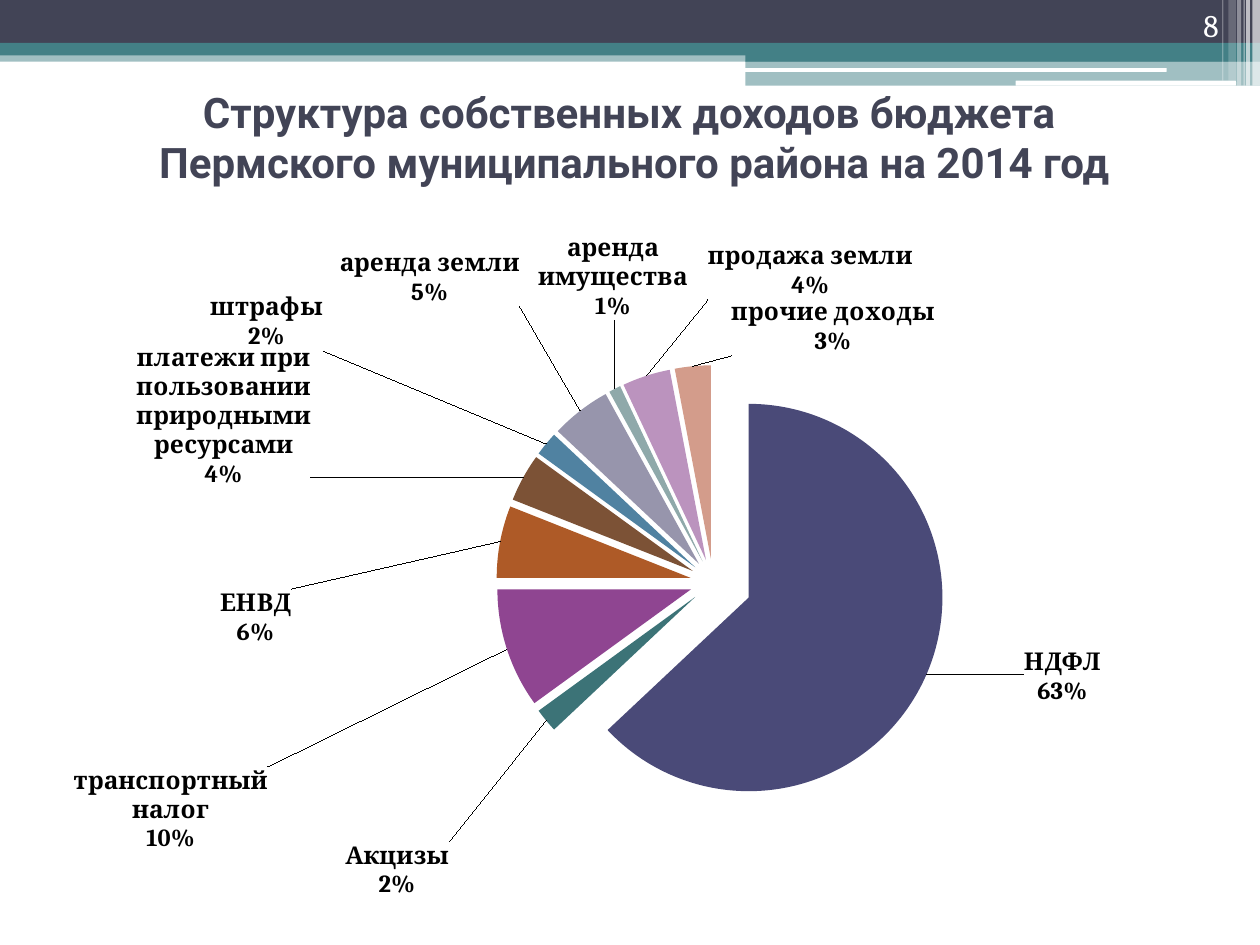
"""Build the slide on the structure of the district's own budget revenue in 2014."""
import copy
import math

from lxml import etree
from pptx import Presentation
from pptx import util as u
from pptx.chart import data as chart_data
from pptx.dml import color
from pptx.enum import chart as chart_enum, shapes, text
from pptx.oxml import ns

COLOURS = {
    "white": "FFFFFF", "ink": "000000", "navy": "424456", "teal": "438086",
    "indigo": "4A4A78", "pine": "3C7377", "purple": "8F4591", "rust": "AE5A27",
    "brown": "7C5236", "blue": "5082A1", "grey": "9795AC", "sage": "8FA9AA",
    "lilac": "BB93BE", "salmon": "D39C8B",
}

BARS = [
    (0, 28.8, 720, 6.5, "teal", 50),
    (0, 0, 720, 24.5, "navy", 100),
    (0, 24.5, 720, 7.2, "teal", 100),
    (426, 28.1, 294, 7.2, "teal", 100),
    (426, 34.6, 294, 14.4, "teal", 50),
]
PILLS = [(425.5, 38.9, 241.2, 2.2), (580.3, 46.1, 126, 2.9)]
STRIPES = [
    (715.7, 4.3, 49, 65), (712.1, 2.2, 49, 65), (710.6, 0.7, 49, 60),
    (707, 2.2, 49, 40), (702, 4.3, 46.1, 20), (698.4, 0.7, 46.1, 30),
]

REVENUES = [
    ("НДФЛ", 63, "indigo", (585.1, 370.3)),
    ("Акцизы", 2, "pine", (256.6, 481.1)),
    ("транспортный налог", 10, "purple", (153.1, 438.3)),
    ("ЕНВД", 6, "rust", (166.3, 369.7)),
    ("платежи при пользовании природными ресурсами", 4, "brown", (177.7, 279.4)),
    ("штрафы", 2, "blue", (184.6, 200.6)),
    ("аренда земли", 5, "grey", (297.1, 175.4)),
    ("аренда имущества", 1, "sage", (393.1, 183.4)),
    ("продажа земли", 4, "lilac", (521.7, 171.4)),
    ("прочие доходы", 3, "salmon", (534.3, 203.4)),
]
CHART_BOX = (20.9, 127.4, 666.7, 387.4)
PLOT = {"x": 0.25, "y": 0.21, "w": 0.66, "h": 0.64}
EXPLOSION, FIRST_EXPLOSION = 12, 20
LABEL_GAP = 4.25


def element(tag, value=None):
    made = etree.Element(ns.qn(tag))
    if value is not None:
        made.set("val", str(value))
    return made


def layout(places, inner=False):
    outer = element("c:layout")
    manual = etree.SubElement(outer, ns.qn("c:manualLayout"))
    if inner:
        manual.append(element("c:layoutTarget", "inner"))
        manual.extend([element("c:xMode", "edge"), element("c:yMode", "edge")])
    manual.extend([element(f"c:{key}", value) for key, value in places.items()])
    return outer


class Deck:
    """Holds the style and the current slide."""

    def __init__(self, prs):
        self.slide = prs.slides.add_slide(prs.slide_layouts[5])

    def rgb(self, name):
        return color.RGBColor.from_string(COLOURS[name])

    def style(self, font, name, size, colour, bold=False):
        formats = {"name": name, "size": u.Pt(size), "bold": bold}
        for key, value in formats.items():
            setattr(font, key, value)
        font.color.rgb = self.rgb(colour)

    def bar(self, left, top, width, height, colour, opacity=100, rounded=False):
        kind = shapes.MSO_SHAPE.ROUNDED_RECTANGLE if rounded else shapes.MSO_SHAPE.RECTANGLE
        bar = self.slide.shapes.add_shape(kind, *map(u.Pt, (left, top, width, height)))
        bar.shadow.inherit = False
        bar.line.fill.background()
        bar.fill.solid()
        bar.fill.fore_color.rgb = self.rgb(colour)
        if opacity < 100:
            tint = bar._element.spPr.find(".//" + ns.qn("a:srgbClr"))
            etree.SubElement(tint, ns.qn("a:alpha")).set("val", str(opacity * 1000))

    def put_text(self, holder, words, anchor, align, **font):
        frame = holder.text_frame
        formats = {"word_wrap": True, "auto_size": text.MSO_AUTO_SIZE.NONE,
                   "vertical_anchor": anchor, "text": words}
        for key, value in formats.items():
            setattr(frame, key, value)
        paragraph = frame.paragraphs[0]
        paragraph.alignment = align
        for run in paragraph.runs:
            self.style(run.font, **font)

    def title(self, box, words):
        heading = self.slide.shapes.title
        for key, value in zip(("left", "top", "width", "height"), box):
            setattr(heading, key, u.Pt(value))
        self.put_text(heading, words, text.MSO_ANCHOR.MIDDLE, text.PP_ALIGN.CENTER,
                      name="Roboto", size=24, colour="navy", bold=True)

    def page_number(self, box, words):
        number = self.slide.shapes.add_textbox(*map(u.Pt, box))
        self.put_text(number, words, text.MSO_ANCHOR.BOTTOM, text.PP_ALIGN.RIGHT,
                      name="Cambria", size=18, colour="white")

    def pie(self, box, revenues):
        shares = chart_data.CategoryChartData()
        shares.categories = [row[0] for row in revenues]
        shares.add_series("Series 1", [row[1] for row in revenues])
        pie = self.slide.shapes.add_chart(
            chart_enum.XL_CHART_TYPE.PIE, *map(u.Pt, box), shares).chart
        pie.has_title = pie.has_legend = False
        self.style(pie.font, "Cambria", 18, "ink")
        plot = pie.plots[0]
        plot.vary_by_categories = True
        area = plot._element.getparent()
        for old in area.findall(ns.qn("c:layout")):
            area.remove(old)
        area.insert(0, layout(PLOT, inner=True))

        series = plot.series[0]
        for index, row in enumerate(revenues):
            fill = series.points[index].format.fill
            fill.solid()
            fill.fore_color.rgb = self.rgb(row[2])
        points = series._element.findall(ns.qn("c:dPt"))
        points[0].addprevious(element("c:explosion", EXPLOSION))
        points[0].find(ns.qn("c:spPr")).addprevious(element("c:explosion", FIRST_EXPLOSION))
        self.pie_labels(series, box, revenues)

    def pie_labels(self, series, box, revenues):
        labels = series.data_labels
        formats = {"show_percentage": True, "show_category_name": True,
                   "show_value": False, "number_format": "0%",
                   "number_format_is_linked": False,
                   "position": chart_enum.XL_LABEL_POSITION.BEST_FIT}
        for key, value in formats.items():
            setattr(labels, key, value)
        self.style(labels.font, "Cambria", 14, "ink", bold=True)
        group = labels._element
        leader = group.find(ns.qn("c:showLeaderLines"))
        if leader is None:
            leader = element("c:showLeaderLines", 1)
            group.append(leader)
        separator = element("c:separator")
        separator.text = "\n"
        leader.addprevious(separator)
        shared = [child for child in group if child is not leader]

        left, top, width, height = box
        centre_x = left + width * (PLOT["x"] + PLOT["w"] / 2)
        centre_y = top + height * (PLOT["y"] + PLOT["h"] / 2)
        radius = height * PLOT["h"] / 2 / (1 + EXPLOSION / 100)
        total, passed = sum(row[1] for row in revenues), 0
        for index, (_, share, _, (x, y)) in enumerate(revenues):
            angle = math.tau * (passed + share / 2) / total
            passed += share
            explosion = EXPLOSION if index else FIRST_EXPLOSION
            reach = radius * (1 + explosion / 100) + LABEL_GAP
            shift = {"x": (x - centre_x - reach * math.sin(angle)) / width,
                     "y": (y - centre_y + reach * math.cos(angle)) / height}
            label = element("c:dLbl")
            label.extend([element("c:idx", index), layout(shift)])
            label.extend(copy.deepcopy(shared))
            group.insert(index, label)


def main():
    prs = Presentation()
    prs.slide_width, prs.slide_height = u.Pt(720), u.Pt(540)
    deck = Deck(prs)
    for bar in BARS:
        deck.bar(*bar)
    for pill in PILLS:
        deck.bar(*pill, "white", rounded=True)
    for left, width, height, opacity in STRIPES:
        deck.bar(left, 0, width, height, "white", opacity)
    deck.title((19.4, 49, 680.4, 58.3), "Структура собственных доходов бюджета\v"
               " Пермского муниципального района на 2014 год")
    deck.pie(CHART_BOX, REVENUES)
    deck.page_number((643.7, 0, 59.8, 28.8), "8")
    prs.save("out.pptx")


if __name__ == "__main__":
    main()
